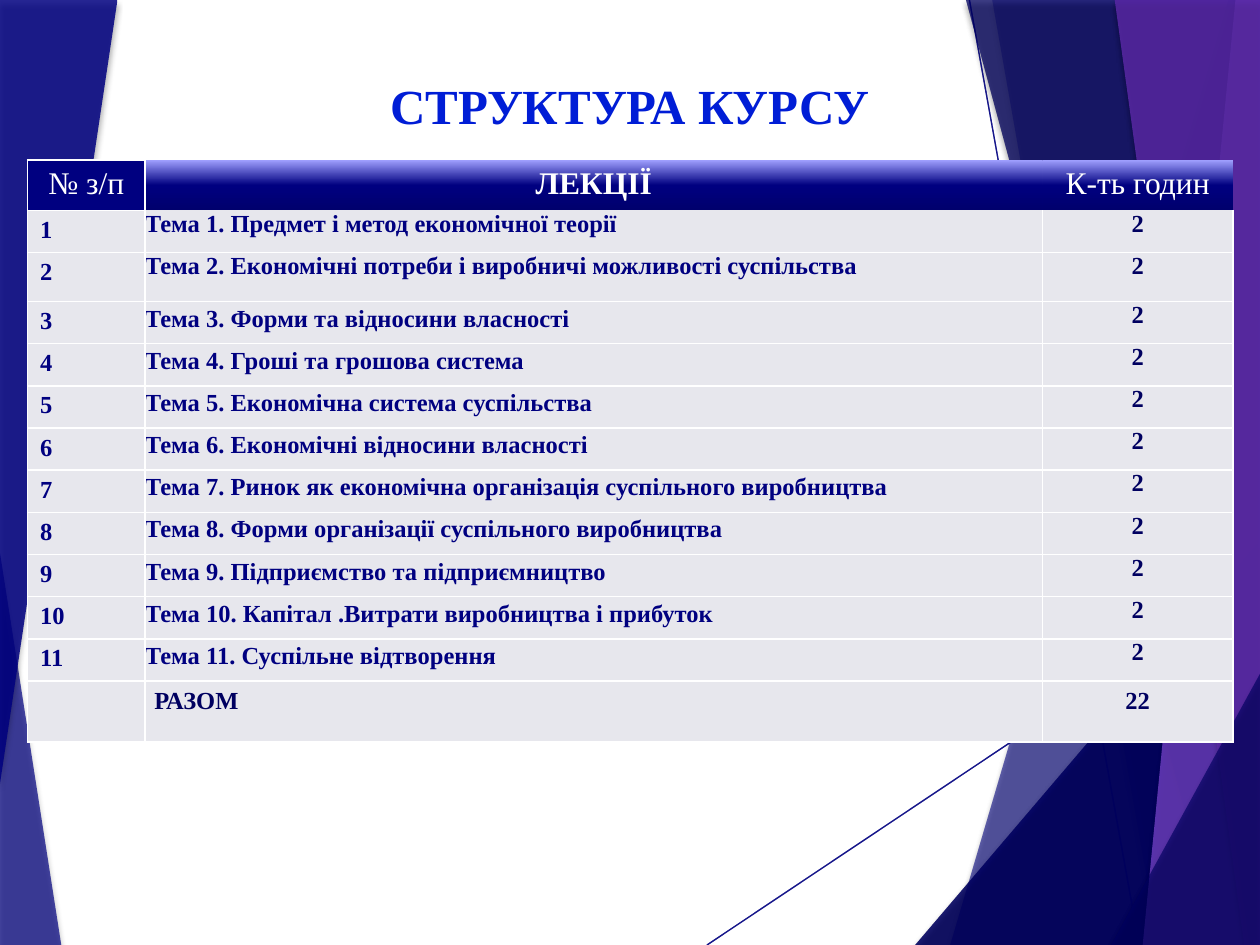
from lxml import etree
from pptx import Presentation
from pptx.dml.color import RGBColor
from pptx.enum.shapes import MSO_CONNECTOR
from pptx.enum.text import MSO_AUTO_SIZE, PP_ALIGN as AL
from pptx.oxml.ns import qn
from pptx.util import Pt

FONT = "Times New Roman"
WHITE = RGBColor(0xFF, 0xFF, 0xFF)
BLUE = RGBColor(0x00, 0x1D, 0xD6)
NAVY = RGBColor(0x00, 0x00, 0x80)
DARK = RGBColor(0x00, 0x00, 0x60)
DEEP = RGBColor(0x00, 0x00, 0x6D)
PALE = RGBColor(0xA0, 0xA0, 0xFF)
GREY = RGBColor(0xE7, 0xE7, 0xED)
LILAC = RGBColor(0x7B, 0x46, 0xD0)
VIOLET = RGBColor(0x5A, 0x2A, 0xA6)
BLACK = RGBColor(0x00, 0x00, 0x00)

LEFT_FOOT = ([(0, 316), (35, 540), (0, 540)], NAVY, 70)
LEFT_TOP = ([(0, 0), (67, 0), (67, 1), (0, 448)], NAVY, 85)
RIGHT_EDGE = [(720, 540), (720, 0)]
RIGHT_SHARDS = [
    ([(702, 0), (543, 540), *RIGHT_EDGE], NAVY, 36),
    ([(567, 0), (662, 540), *RIGHT_EDGE], NAVY, 20),
    ([(523, 540), (720, 309), (720, 540)], DARK, 66),
    ([(552, 0), (698, 540), *RIGHT_EDGE], DARK, 50),
    ([(706, 0), (653, 540), *RIGHT_EDGE], LILAC, 70),
    ([(637, 0), (711, 540), *RIGHT_EDGE], VIOLET, 82),
    ([(635, 540), (720, 385), (720, 540)], DARK, 66),
]
RAYS = [((404, 540), (720, 329)), ((554, 0), (651, 540))]

HEADS = ["№ з/п", "ЛЕКЦІЇ", "К-ть годин"]
TOPICS = [
    "Предмет і метод економічної теорії",
    "Економічні потреби і виробничі можливості суспільства",
    "Форми та відносини власності",
    "Гроші та грошова система",
    "Економічна система суспільства",
    "Економічні відносини власності",
    "Ринок як економічна організація суспільного виробництва",
    "Форми організації суспільного виробництва",
    "Підприємство та підприємництво",
    "Капітал .Витрати виробництва і прибуток",
    "Суспільне відтворення",
]
JUSTIFIED = {1, 2, 3, 5}
HOURS = 2
COLS = [67, 513, 108.7]
ROWS = [28.7, 24.1, 28] + [24.1] * 9 + [34.8]


def add_xml(parent, tag, **attrs):
    return etree.SubElement(parent, qn(tag), {k: str(v) for k, v in attrs.items()})


def add_colour(parent, colour, alpha=None):
    clr = add_xml(parent, "a:srgbClr", val=colour)
    if alpha is not None:
        add_xml(clr, "a:alpha", val=alpha * 1000)


def write(tf, text, size=14, colour=NAVY, bold=True, align=AL.LEFT, spacing=None):
    p = tf.paragraphs[0]
    p.alignment = align
    if spacing:
        p.line_spacing = spacing
    r = p.add_run()
    r.text = text
    r.font.name, r.font.size, r.font.bold = FONT, Pt(size), bold
    r.font.color.rgb = colour


def add_shard(s, x, y, points, colour, alpha):
    pts = [(Pt(x + px), Pt(y + py)) for px, py in points]
    fb = s.shapes.build_freeform(*pts[0], scale=1.0)
    fb.add_line_segments(pts[1:], close=True)
    sp = fb.convert_to_shape()
    sp.shadow.inherit = False
    sp.fill.solid()
    sp.fill.fore_color.rgb = colour
    sp.line.fill.background()
    solid = sp.fill._xPr.find(qn("a:solidFill"))
    solid.clear()
    add_colour(solid, colour, alpha)
    effects = sp.fill._xPr.find(qn("a:effectLst"))
    shadow = add_xml(effects, "a:outerShdw", blurRad=Pt(3), dist=Pt(2),
                     dir=5400000, rotWithShape=0)
    add_colour(shadow, BLACK, 35)


def add_ray(s, x, y, start, end):
    ends = [Pt(v) for v in (x + start[0], y + start[1], x + end[0], y + end[1])]
    cx = s.shapes.add_connector(MSO_CONNECTOR.STRAIGHT, *ends)
    cx.line.width = Pt(0.75)
    cx.line.color.rgb = NAVY
    solid = cx.line.fill._xPr.find(qn("a:solidFill"))
    solid.clear()
    add_colour(solid, NAVY, 70)
    add_xml(cx._element.spPr, "a:effectLst")


def add_backdrop(s, x, y):
    for first, last in ((LEFT_FOOT, None), (None, LEFT_TOP)):
        if first:
            add_shard(s, x, y, *first)
        for ray in RAYS:
            add_ray(s, x, y, *ray)
        for shard in RIGHT_SHARDS:
            add_shard(s, x, y, *shard)
        if last:
            add_shard(s, x, y, *last)


def add_title(s, x, y, w, h):
    tf = s.shapes.add_textbox(Pt(x), Pt(y), Pt(w), Pt(h)).text_frame
    tf.word_wrap = True
    tf.auto_size = MSO_AUTO_SIZE.SHAPE_TO_FIT_TEXT
    write(tf, "СТРУКТУРА КУРСУ", size=28, colour=BLUE, align=AL.CENTER)


def set_borders(cell, sides):
    tc_pr = cell._tc.get_or_add_tcPr()
    for i, side in enumerate("LRTB"):
        ln = etree.Element(qn(f"a:ln{side}"), w=str(Pt(0.96)))
        if side in sides:
            add_colour(add_xml(ln, "a:solidFill"), WHITE)
        else:
            add_xml(ln, "a:noFill")
        tc_pr.insert(i, ln)


def set_gradient(cell):
    grad = add_xml(cell._tc.get_or_add_tcPr(), "a:gradFill", rotWithShape=1)
    stops = add_xml(grad, "a:gsLst")
    for pos, colour in ((0, PALE), (50, NAVY), (100, DEEP)):
        add_colour(add_xml(stops, "a:gs", pos=pos * 1000), colour)
    add_xml(grad, "a:lin", ang=5400000, scaled=0)


def set_cell(cell, text="", margins=(7.2, 3.6), fill=GREY, borders="LRTB", **fmt):
    cell.margin_left = cell.margin_right = Pt(margins[0])
    cell.margin_top = cell.margin_bottom = Pt(margins[1])
    if fill:
        cell.fill.solid()
        cell.fill.fore_color.rgb = fill
    else:
        set_gradient(cell)
    set_borders(cell, borders)
    if text:
        write(cell.text_frame, text, **fmt)
    else:
        cell.text_frame.paragraphs[0].font.size = Pt(14)


def add_course_table(s, x, y, w, h):
    frame = s.shapes.add_table(len(ROWS), len(COLS), Pt(x), Pt(y), Pt(w), Pt(h))
    table = frame.table
    table.first_row = table.horz_banding = False
    for col, width in zip(table.columns, COLS):
        col.width = Pt(width)
    for row, height in zip(table.rows, ROWS):
        row.height = Pt(height)
    head_looks = [(NAVY, "LRTB", False), (None, "L", True), (None, "", False)]
    for c, (text, (fill, borders, bold)) in enumerate(zip(HEADS, head_looks)):
        set_cell(table.cell(0, c), text, fill=fill, borders=borders, size=18,
                 colour=WHITE, bold=bold, align=AL.CENTER)
    for n, topic in enumerate(TOPICS, 1):
        borders = "LRB" if n == 1 else "LRTB"
        set_cell(table.cell(n, 0), str(n))
        set_cell(table.cell(n, 1), f"Тема {n}. {topic}", margins=(0, 0),
                 borders=borders, spacing=1.14 if n > 2 else None,
                 align=AL.JUSTIFY if n in JUSTIFIED else AL.LEFT)
        set_cell(table.cell(n, 2), str(HOURS), margins=(0, 0), borders=borders,
                 colour=DARK, align=AL.CENTER)
    last = len(ROWS) - 1
    set_cell(table.cell(last, 0))
    set_cell(table.cell(last, 1), "РАЗОМ", margins=(5.4, 3.6), colour=DARK)
    set_cell(table.cell(last, 2), str(HOURS * len(TOPICS)), margins=(5.4, 3.6),
             colour=DARK, align=AL.CENTER)


def main():
    prs = Presentation()
    prs.slide_width, prs.slide_height = Pt(720), Pt(540)
    s = prs.slides.add_slide(prs.slide_layouts[6])
    add_backdrop(s, 0, 0)
    add_title(s, 180, 39.6, 360, 41)
    add_course_table(s, 15.8, 91.4, sum(COLS), sum(ROWS))
    prs.save("out.pptx")


if __name__ == "__main__":
    main()
